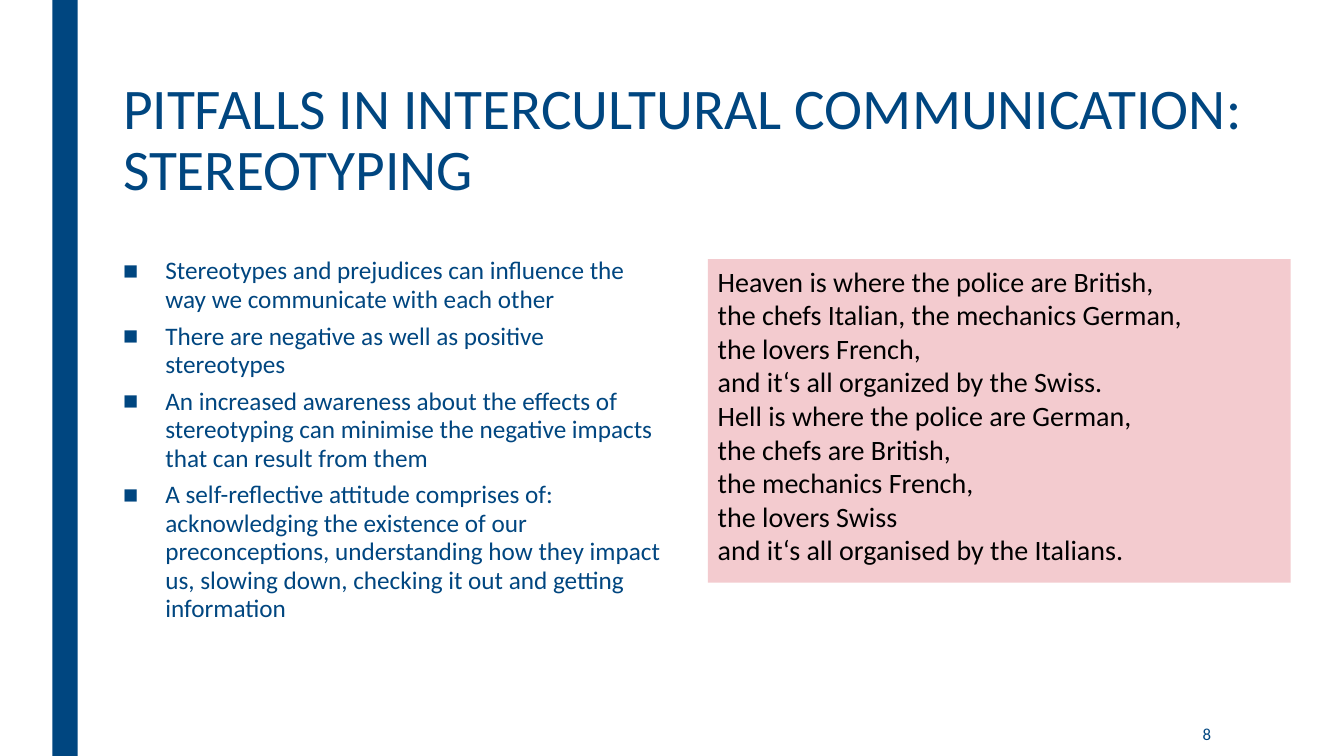
"""Builds the slide on stereotyping in intercultural communication."""
import pptx
import pptx.dml.color
import pptx.enum.shapes
import pptx.enum.text
import pptx.oxml
import pptx.oxml.ns
import pptx.util
from pptx.util import Inches

ALIGN = pptx.enum.text.PP_ALIGN
ANCHOR = pptx.enum.text.MSO_ANCHOR
COLOURS = {"navy": "004680", "rose": "F3CBCF", "black": "000000", "white": "FFFFFF"}
FONT = "Calibri"

TITLE = "PITFALLS IN INTERCULTURAL COMMUNICATION: STEREOTYPING"
POINTS = [
    "Stereotypes and prejudices can influence the way we communicate with each other",
    "There are negative as well as positive stereotypes",
    "An increased awareness about the effects of stereotyping can minimise "
    "the negative impacts that can result from them",
    "A self-reflective attitude comprises of: acknowledging the existence of our "
    "preconceptions, understanding how they impact us, slowing down, checking it out "
    "and getting information",
]
JOKE = [
    "Heaven is where the police are British,\n"
    "the chefs Italian, the mechanics German,\n"
    "the lovers French,\n"
    "and it‘s all organized by the Swiss.",
    "Hell is where the police are German,\n"
    "the chefs are British,\n"
    "the mechanics French,\n"
    "the lovers Swiss\n"
    "and it‘s all organised by the Italians.",
]


def rgb(name):
    return pptx.dml.color.RGBColor.from_string(COLOURS[name])


def set_all(target, values):
    for name, value in values.items():
        setattr(target, name, value)


def place(shape, left, top, width, height):
    set_all(shape, {"left": Inches(left), "top": Inches(top),
                    "width": Inches(width), "height": Inches(height)})


def add_bullet(paragraph):
    properties = paragraph._p.get_or_add_pPr()
    properties.set("marL", str(Inches(0.42)))
    properties.set("indent", str(-Inches(0.42)))
    bullet = pptx.oxml.parse_xml(
        f'<a:buChar {pptx.oxml.ns.nsdecls("a")} char="■"/>')
    properties.append(bullet)


def write(shape, texts, size, colour, spacing=1.0, after=0, align=ALIGN.LEFT,
          anchor=ANCHOR.TOP, bulleted=False):
    frame = shape.text_frame
    set_all(frame, {"word_wrap": True, "vertical_anchor": anchor,
                    "auto_size": pptx.enum.text.MSO_AUTO_SIZE.NONE})
    for number, text in enumerate(texts):
        paragraph = frame.add_paragraph() if number else frame.paragraphs[0]
        paragraph.text = text
        set_all(paragraph, {"alignment": align, "line_spacing": spacing,
                            "space_before": pptx.util.Pt(0),
                            "space_after": pptx.util.Pt(after)})
        if bulleted:
            add_bullet(paragraph)
        for run in paragraph.runs:
            set_all(run.font, {"name": FONT, "size": pptx.util.Pt(size)})
            run.font.color.rgb = rgb(colour)


def add_panel(slide, colour, left, top, width, height):
    panel = slide.shapes.add_shape(
        pptx.enum.shapes.MSO_SHAPE.RECTANGLE,
        Inches(left), Inches(top), Inches(width), Inches(height))
    panel.shadow.inherit = False
    panel.fill.solid()
    panel.fill.fore_color.rgb = rgb(colour)
    panel.line.fill.background()
    return panel


def main():
    deck = pptx.Presentation()
    set_all(deck, {"slide_width": Inches(13.33), "slide_height": Inches(7.5)})
    slide = deck.slides.add_slide(deck.slide_layouts[1])
    slide.background.fill.solid()
    slide.background.fill.fore_color.rgb = rgb("white")

    title, points = slide.placeholders
    place(title, 1.12, 0.75, 11.47, 1.62)
    write(title, [TITLE], 41, "navy", spacing=0.89)

    add_panel(slide, "navy", 0.52, 0, 0.25, 7.5)

    place(points, 1.12, 2.5, 5.55, 3.92)
    write(points, POINTS, 18, "navy", spacing=0.94, after=6, bulleted=True)

    page_number = slide.shapes.add_textbox(
        Inches(10.36), Inches(7.06), Inches(1.75), Inches(0.44))
    write(page_number, ["8"], 12, "navy", align=ALIGN.RIGHT, anchor=ANCHOR.MIDDLE)

    joke = add_panel(slide, "rose", 7.02, 2.57, 5.78, 3.21)
    write(joke, JOKE, 20, "black")

    deck.save("out.pptx")


if __name__ == "__main__":
    main()
